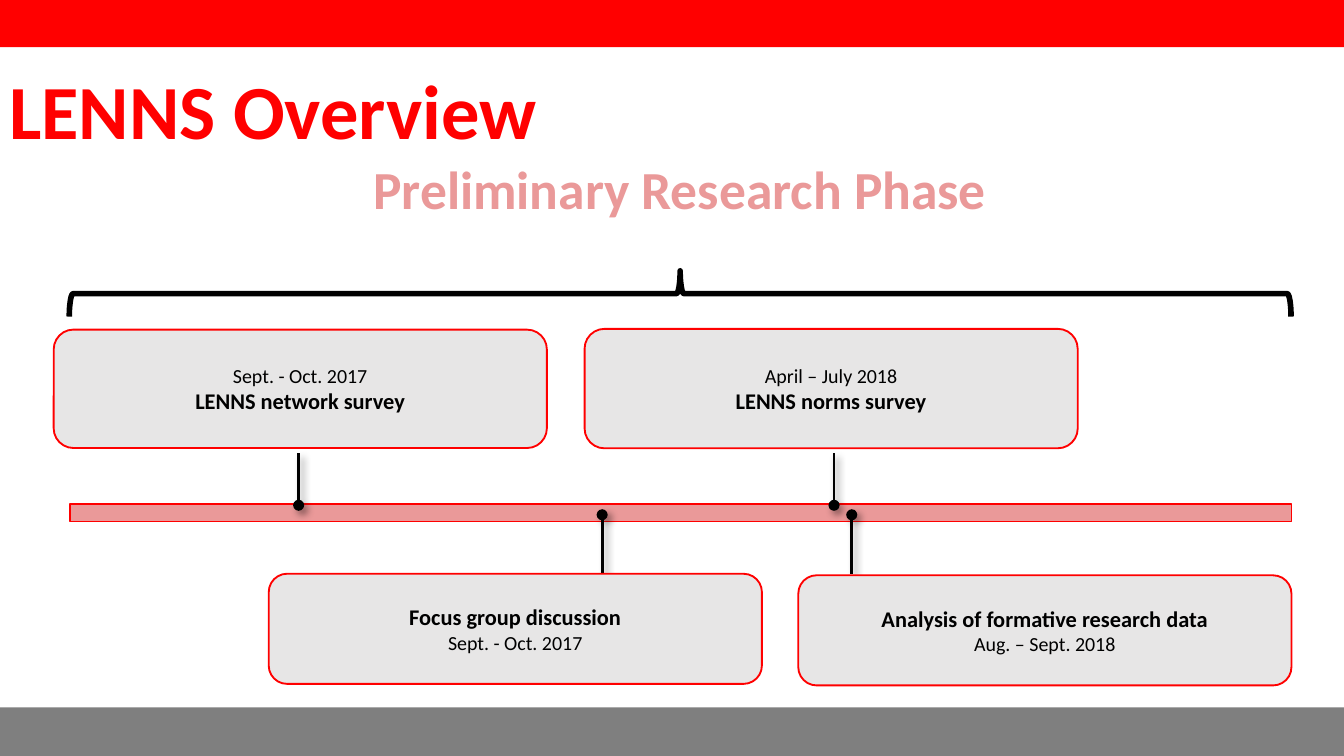
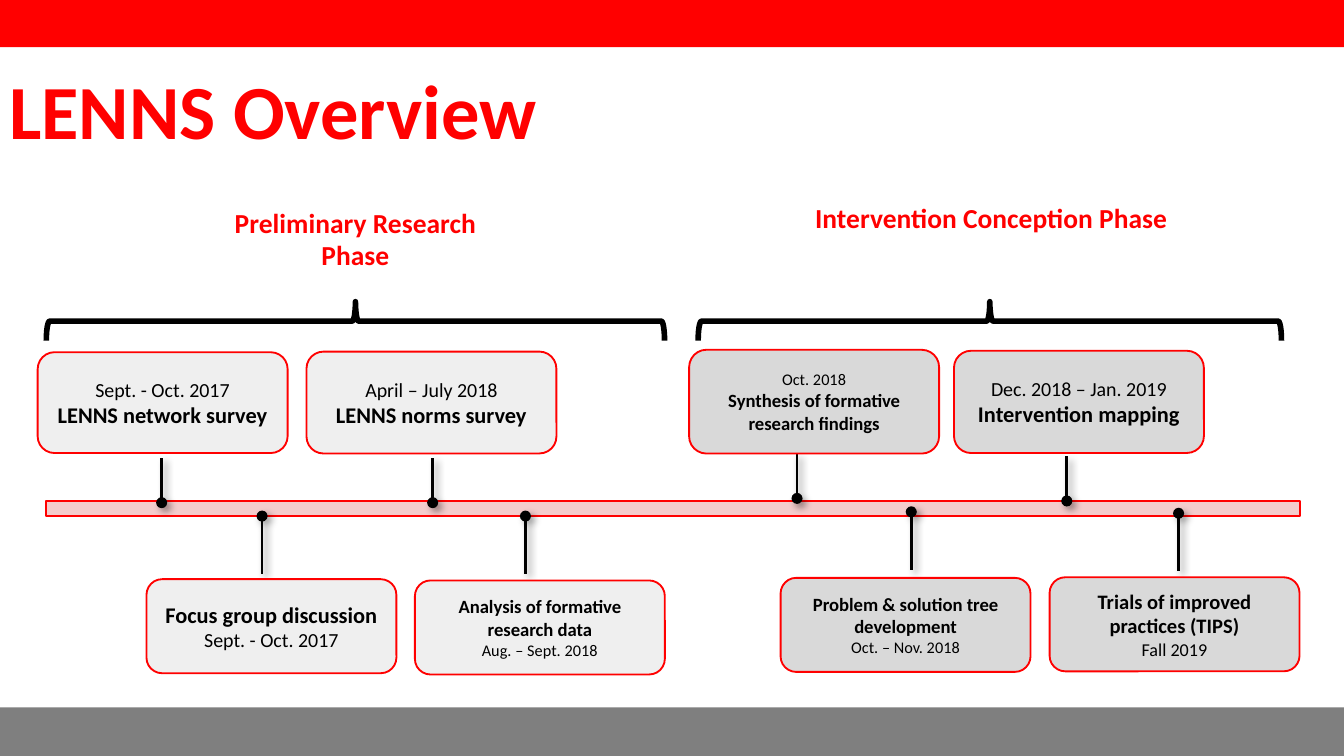
from dataclasses import dataclass

import lxml.etree
import pptx
import pptx.dml.color
import pptx.enum.shapes
import pptx.enum.text
import pptx.oxml.ns
import pptx.util

Pt = pptx.util.Pt
SHAPES = pptx.enum.shapes.MSO_SHAPE
ALIGN = pptx.enum.text.PP_ALIGN
ANCHOR = pptx.enum.text.MSO_ANCHOR


@dataclass(frozen=True)
class Theme:
    font: str = "Calibri"
    red: str = "FF0000"
    rose: str = "EA9999"
    blush: str = "F4CCCC"
    footer: str = "7F7F7F"
    ink: str = "000000"
    silver: str = "E7E6E6"
    light: str = "EFEFEF"
    mid: str = "D9D9D9"
    title_size: float = 41
    phase_large: float = 28.7
    phase_small: float = 14.7
    event_size: float = 12
    event_medium: float = 11
    event_small: float = 10
    date_step: float = 1.3  # dates are this much smaller than events


THEME = Theme()


@dataclass
class Milestone:
    event: str
    date: str
    left: float
    top: float
    height: float
    stem_x: float
    dot_y: float
    fill: str
    size: float = THEME.event_size


def rgb(value):
    return pptx.dml.color.RGBColor.from_string(value)


def apply(target, formats):
    for name, value in formats.items():
        setattr(target, name, value)


class Deck:
    def __init__(self, theme):
        self.theme = theme
        self.prs = pptx.Presentation()
        apply(self.prs, {"slide_width": Pt(720), "slide_height": Pt(405)})
        self.slide = None

    def new_slide(self, title):
        self.slide = self.prs.slides.add_slide(self.prs.slide_layouts[6])
        self.shape(SHAPES.RECTANGLE, (-1.5, -0.7, 723, 26), self.theme.red)
        self.shape(SHAPES.RECTANGLE, (-1.5, 379, 721.5, 26), self.theme.footer)
        self.text((0, 31, 716, 55), title, self.theme.title_size,
                  self.theme.red, ALIGN.LEFT, (5, 3))

    def shape(self, kind, box, fill=None, line=None, width=1):
        drawn = self.slide.shapes.add_shape(kind, *map(Pt, box))
        drawn.shadow.inherit = False
        for part, color in ((drawn.fill, fill), (drawn.line.fill, line)):
            if color:
                part.solid()
                part.fore_color.rgb = rgb(color)
            else:
                part.background()
        if line:
            drawn.line.width = Pt(width)
        return drawn

    def frame(self, holder, anchor, insets):
        across, down = map(Pt, insets)
        apply(holder.text_frame, {
            "word_wrap": True, "vertical_anchor": anchor,
            "margin_left": across, "margin_right": across,
            "margin_top": down, "margin_bottom": down})
        return holder.text_frame

    def words(self, paragraph, content, size, color, bold, align):
        paragraph.alignment = align
        run = paragraph.add_run()
        run.text = content
        apply(run.font, {"name": self.theme.font, "size": Pt(size), "bold": bold})
        run.font.color.rgb = rgb(color)

    def text(self, box, content, size, color, align=ALIGN.CENTER, insets=(7.2, 3.6)):
        holder = self.slide.shapes.add_textbox(*map(Pt, box))
        frame = self.frame(holder, ANCHOR.TOP, insets)
        self.words(frame.paragraphs[0], content, size, color, True, align)

    def brace(self, left, top, width, height):
        # A left brace turned upright: its own box is the visible one on its side
        center_x, center_y = left + width / 2, top + height / 2
        box = (center_x - height / 2, center_y - width / 2, height, width)
        self.shape(SHAPES.LEFT_BRACE, box, line=self.theme.ink, width=3).rotation = 90

    def stem(self, x, dot_y, end_y):
        stem = self.slide.shapes.add_connector(
            pptx.enum.shapes.MSO_CONNECTOR.STRAIGHT, Pt(x), Pt(dot_y), Pt(x), Pt(end_y))
        stem.line.width = Pt(1.5)
        stem.line.color.rgb = rgb(self.theme.ink)
        qn = pptx.oxml.ns.qn
        add = lxml.etree.SubElement
        properties = stem._element.spPr
        add(properties.get_or_add_ln(), qn("a:headEnd"), type="oval")
        effects = add(properties, qn("a:effectLst"))
        shadow = add(effects, qn("a:outerShdw"), blurRad=str(Pt(4)),
                     dist=str(Pt(3)), dir="2700000", algn="tl", rotWithShape="0")
        color = add(shadow, qn("a:srgbClr"), val=self.theme.ink)
        add(color, qn("a:alpha"), val="40000")

    def milestone(self, item, width, stem_length):
        above = item.top < item.dot_y
        self.stem(item.stem_x, item.dot_y,
                  item.dot_y + (-stem_length if above else stem_length))
        card = self.shape(SHAPES.ROUNDED_RECTANGLE,
                          (item.left, item.top, width, item.height),
                          item.fill, self.theme.red)
        frame = self.frame(card, ANCHOR.MIDDLE, (7.2, 3.6))
        lines = [(item.event, item.size, True),
                 (item.date, item.size - self.theme.date_step, False)]
        if above:
            lines.reverse()
        paragraphs = (frame.paragraphs[0], frame.add_paragraph())
        for paragraph, (content, size, bold) in zip(paragraphs, lines):
            self.words(paragraph, content, size, self.theme.ink, bold, ALIGN.CENTER)

    def timeline(self, bar, fill, card_width, upper_stem, lower_stem, milestones):
        self.shape(SHAPES.RECTANGLE, bar, fill, self.theme.red)
        for item in milestones:
            stem_length = upper_stem if item.top < bar[1] else lower_stem
            self.milestone(item, card_width, stem_length)


NETWORK = ("LENNS network survey", "Sept. - Oct. 2017")
FOCUS = ("Focus group discussion", "Sept. - Oct. 2017")
NORMS = ("LENNS norms survey", "April – July 2018")
ANALYSIS = ("Analysis of formative research data", "Aug. – Sept. 2018")
TITLE = "LENNS Overview"
PRELIMINARY = "Preliminary Research Phase"


def preliminary_slide(deck):
    t = deck.theme
    deck.new_slide(TITLE)
    deck.brace(37.1, 145.1, 654.5, 24.5)
    deck.text((190, 80, 348.5, 55), PRELIMINARY, t.phase_large, t.rose)
    deck.timeline((37.4, 270, 654.5, 9.4), t.rose, 264.2, 28, 31.6, [
        Milestone(*FOCUS, 144, 307.4, 59, 322.6, 275.8, t.silver),
        Milestone(*NETWORK, 28.8, 176.6, 63.4, 160, 270.7, t.silver),
        Milestone(*ANALYSIS, 427.7, 308.2, 59, 456.3, 275.8, t.silver),
        Milestone(*NORMS, 313.2, 176.2, 64, 446.8, 270.7, t.silver),
    ])


def both_phases_slide(deck):
    t = deck.theme
    deck.new_slide(TITLE)

    # Phases
    deck.brace(24.8, 161.6, 331.2, 20.9)
    deck.text((102.2, 106.6, 176.4, 23.8), PRELIMINARY, t.phase_small, t.red)
    deck.brace(374, 161.6, 312.5, 20.9)
    deck.text((427, 104.4, 208, 23.8), "Intervention Conception Phase",
              t.phase_small, t.red)

    # Milestones along the bar
    deck.timeline((24.5, 268.6, 671.8, 7.9), t.blush, 133.9, 24, 31, [
        Milestone(*NETWORK, 20.2, 188.7, 54, 86.6, 269.3, t.light),
        Milestone(*FOCUS, 78.5, 310.3, 50.4, 140.4, 276.5, t.light),
        Milestone(*NORMS, 164.2, 188.4, 54.6, 231.8, 269.3, t.light),
        Milestone(*ANALYSIS, 222.3, 311, 50.4, 281.5, 276.5, t.light, t.event_small),
        Milestone("Synthesis of formative research findings", "Oct. 2018",
                  369.2, 187.4, 55.6, 427, 267, t.mid, t.event_small),
        Milestone("Problem & solution tree development", "Oct. – Nov. 2018",
                  418.2, 309.6, 50.4, 488.2, 274.2, t.mid, t.event_small),
        Milestone("Intervention mapping", "Dec. 2018 – Jan. 2019",
                  511.1, 187.9, 54.8, 571.5, 268.4, t.mid),
        Milestone("Trials of improved practices (TIPS)", "Fall 2019",
                  562.3, 309.3, 50.4, 631.4, 275, t.mid, t.event_medium),
    ])


def main():
    deck = Deck(THEME)
    preliminary_slide(deck)
    both_phases_slide(deck)
    deck.prs.save("out.pptx")


if __name__ == "__main__":
    main()
